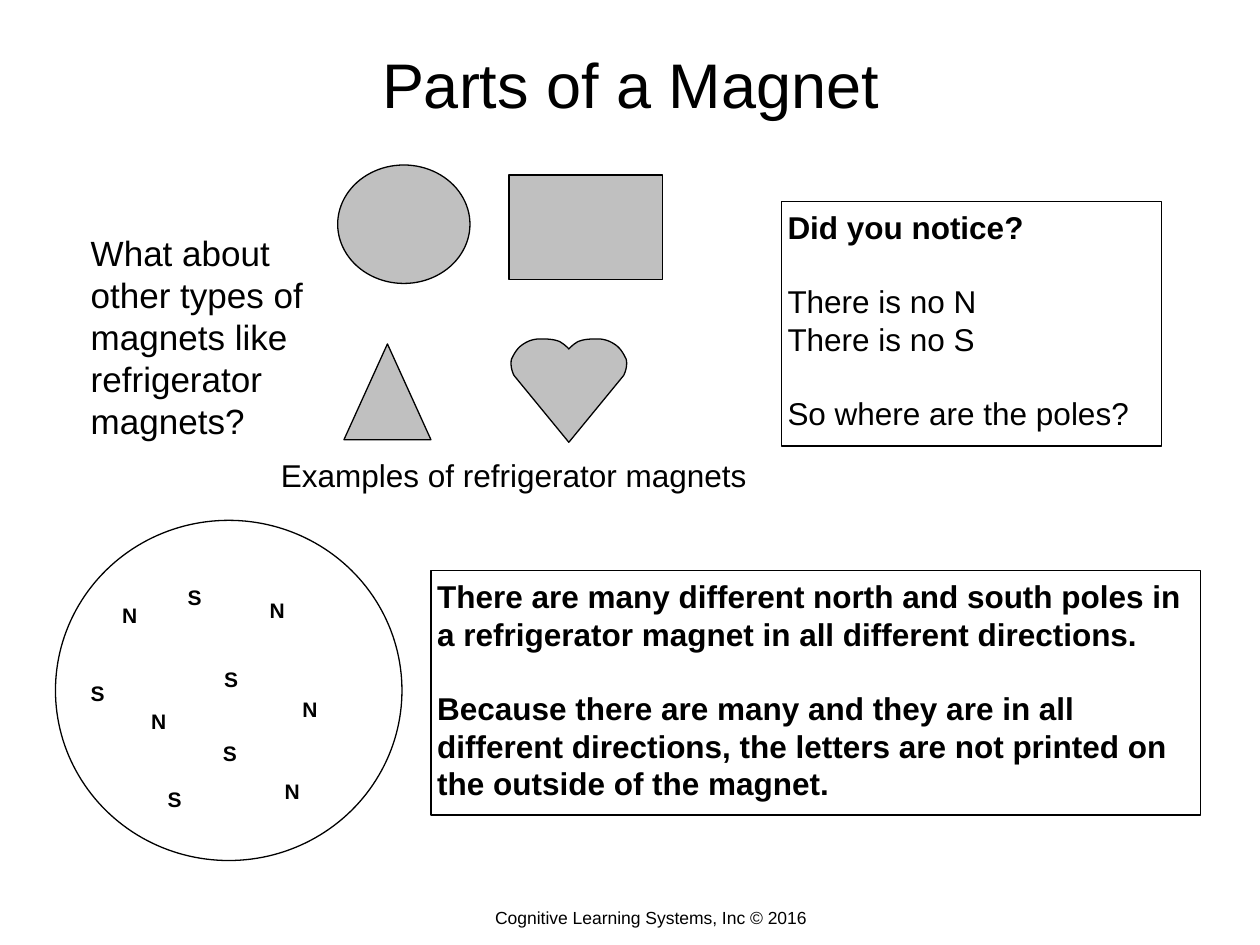
from pptx import Presentation
from pptx.dml.color import RGBColor
from pptx.enum.shapes import MSO_SHAPE
from pptx.enum.text import MSO_ANCHOR, MSO_AUTO_SIZE, PP_ALIGN
from pptx.util import Inches, Pt

OVAL = MSO_SHAPE.OVAL
RECT = MSO_SHAPE.RECTANGLE
WEDGE = MSO_SHAPE.ISOSCELES_TRIANGLE
TOP, MIDDLE = MSO_ANCHOR.TOP, MSO_ANCHOR.MIDDLE
LEFT, CENTER = PP_ALIGN.LEFT, PP_ALIGN.CENTER
FIXED = MSO_AUTO_SIZE.NONE

INK, PAPER, GREY = "000000", "FFFFFF", "C0C0C0"
PAD = Inches(0.05)
LINE = 20.7


def color(code):
    return RGBColor.from_string(code)


def apply(target, values):
    for name, value in values.items():
        setattr(target, name, value)


def place(shape, box):
    names = ("left", "top", "width", "height")
    apply(shape, dict(zip(names, map(Inches, box))))


def write(shape, lines, size, align=LEFT, anchor=TOP, wrap=True):
    frame = shape.text_frame
    apply(frame, {
        "margin_left": PAD, "margin_right": PAD,
        "margin_top": PAD, "margin_bottom": PAD,
        "auto_size": FIXED, "word_wrap": wrap, "vertical_anchor": anchor,
    })
    for index, (text, bold, gap) in enumerate(lines):
        para = frame.add_paragraph() if index else frame.paragraphs[0]
        para.text = text
        apply(para, {"alignment": align, "space_before": Pt(gap)})
        apply(para.font, {"name": "Arial", "size": Pt(size), "bold": bold})
        para.font.color.rgb = color(INK)


def label(slide, box, text, size, bold=False, **style):
    shape = slide.shapes.add_textbox(*map(Inches, box))
    write(shape, [(text, bold, 0)], size, **style)


def paint(shape, fill):
    shape.shadow.inherit = False
    if fill:
        shape.fill.solid()
        shape.fill.fore_color.rgb = color(fill)
    else:
        shape.fill.background()
    shape.line.color.rgb = color(INK)
    shape.line.width = Pt(0.75)


def draw(slide, kind, box, fill=None):
    shape = slide.shapes.add_shape(kind, *map(Inches, box))
    paint(shape, fill)
    return shape


def curve(start, one, two, end, steps=8):
    for step in range(1, steps + 1):
        t = step / steps
        u = 1 - t
        yield tuple(
            u**3 * a + 3 * u**2 * t * b + 3 * u * t**2 * c + t**3 * d
            for a, b, c, d in zip(start, one, two, end)
        )


def heart(slide, left, top):
    mid = 0.455
    bends = [
        ((0.44, 0.06), (0.40, 0.03), (0.38, 0.02)),
        ((0.33, 0), (0.28, 0), (0.22, 0)),
        ((0.17, 0), (0.12, 0.02), (0.08, 0.05)),
        ((0.04, 0.08), (0.02, 0.12), (0, 0.16)),
        ((-0.01, 0.20), (0, 0.25), (0.02, 0.29)),
    ]
    half = [(mid, 0.08)]
    for bend in bends:
        half.extend(curve(half[-1], *bend))
    mirror = [(2 * mid - x, y) for x, y in reversed(half[1:])]
    spots = [(Inches(left + x), Inches(top + y))
             for x, y in half + [(mid, 0.82)] + mirror]
    path = slide.shapes.build_freeform(*spots[0])
    path.add_line_segments(spots[1:], close=True)
    paint(path.convert_to_shape(), GREY)


def title(slide, box):
    shape = slide.shapes.title
    place(shape, box)
    write(shape, [("Parts of a Magnet", False, 0)], 36, align=CENTER)


def samples(slide, left, top):
    for kind, x, y, width, height in (
        (OVAL, 0.5, 0, 1.05, 0.94),
        (RECT, 1.86, 0.08, 1.22, 0.83),
        (WEDGE, 0.55, 1.42, 0.69, 0.76),
    ):
        draw(slide, kind, (left + x, top + y, width, height), GREY)
    heart(slide, left + 1.88, top + 1.38)
    label(slide, (left, top + 2.26, 4.33, 0.38),
          "Examples of refrigerator magnets", 18)


def panel(slide, box, lines):
    write(draw(slide, RECT, box, PAPER), lines, 18)


def poles(slide, box):
    draw(slide, OVAL, box)
    left, top = box[:2]
    spots = {
        "N": ((0.48, 0.6), (0.71, 1.44), (1.91, 1.35),
              (1.65, 0.56), (1.77, 2)),
        "S": ((1, 0.46), (0.84, 2.06), (1.29, 1.11),
              (0.23, 1.22), (1.28, 1.7)),
    }
    for pole, points in spots.items():
        for x, y in points:
            label(slide, (left + x, top + y, 0.46, 0.29), pole, 12, True)


def main():
    deck = Presentation()
    apply(deck, {"slide_width": Inches(10), "slide_height": Inches(7.5)})
    slide = deck.slides.add_slide(deck.slide_layouts[5])
    title(slide, (-0.03, 0.31, 10.07, 0.67))
    panel(slide, (6.2, 1.6, 3.02, 1.94), [
        ("Did you notice?", True, 0),
        ("There is no N", False, LINE),
        ("There is no S", False, 0),
        ("So where are the poles?", False, LINE),
    ])
    samples(slide, 2.18, 1.31)
    label(slide, (0.67, 1.79, 1.92, 1.69),
          "What about other types of magnets like refrigerator magnets?", 20)
    panel(slide, (3.42, 4.53, 6.11, 1.94), [
        ("There are many different north and south poles in a refrigerator "
         "magnet in all different directions.", True, 0),
        ("Because there are many and they are in all different directions, "
         "the letters are not printed on the outside of the magnet.",
         True, LINE),
    ])
    poles(slide, (0.44, 4.13, 2.75, 2.7))
    label(slide, (3.87, 7.16, 2.59, 0.25),
          "Cognitive Learning Systems, Inc © 2016", 10,
          align=CENTER, anchor=MIDDLE, wrap=False)
    deck.save("out.pptx")


if __name__ == "__main__":
    main()
